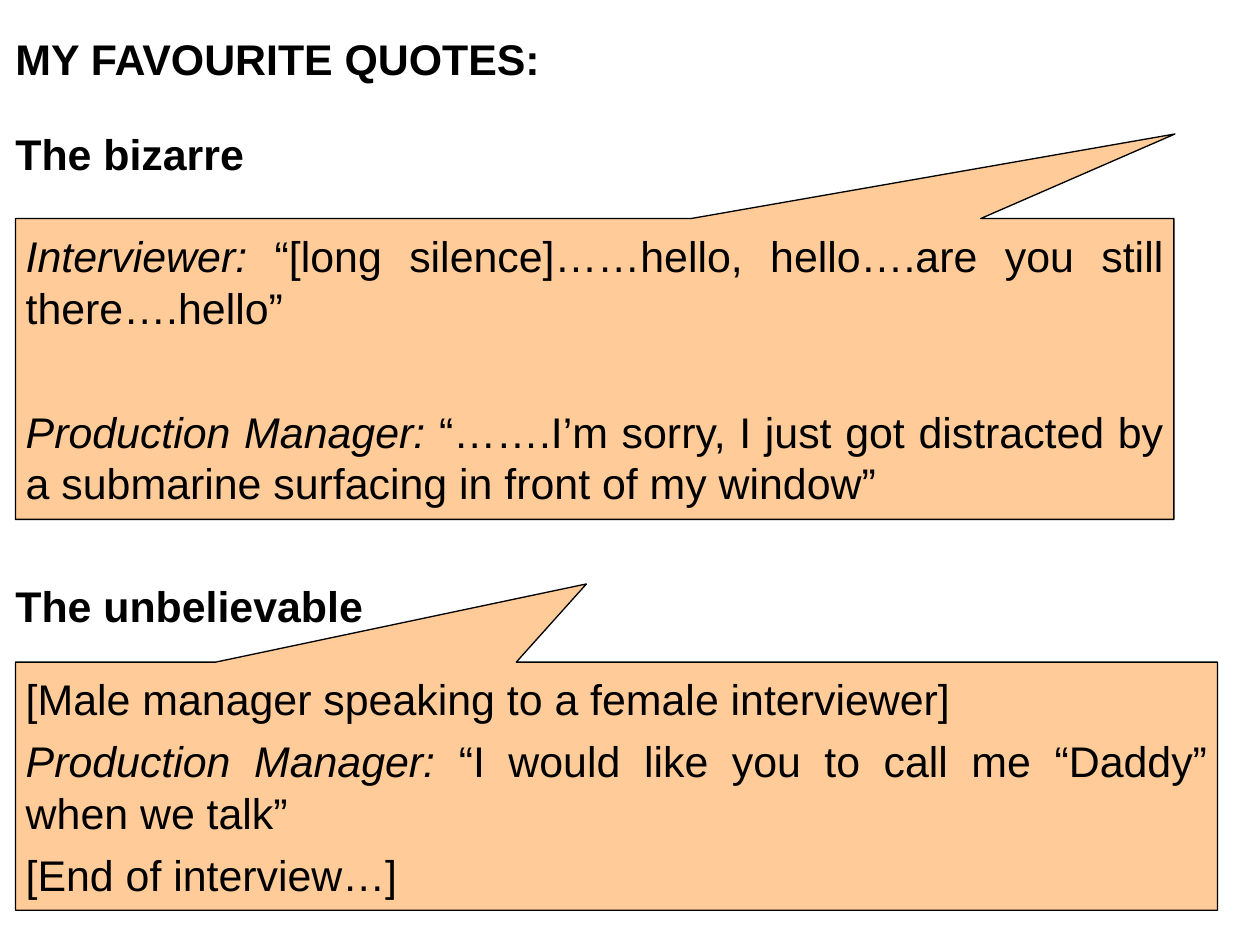
"""Build a slide of favourite interview quotes in two speech callouts."""
from dataclasses import dataclass

from pptx import Presentation
from pptx.dml.color import RGBColor
from pptx.enum.shapes import MSO_SHAPE
from pptx.enum.text import MSO_ANCHOR, MSO_AUTO_SIZE, PP_ALIGN
from pptx.util import Inches, Pt

BLACK = RGBColor(0x00, 0x00, 0x00)
PEACH = RGBColor(0xFF, 0xCC, 0x99)
LEFT = 0.12
HEADING_WIDTH, HEADING_HEIGHT = 9.6, 0.5
LINE_PITCH = 28.8
QUOTE_GAP = 6


@dataclass(frozen=True)
class Line:
    text: str
    speaker: str = ""
    gap: float = QUOTE_GAP


@dataclass(frozen=True)
class Quote:
    heading: str
    heading_top: float
    top: float
    width: float
    height: float
    tip: tuple[float, float]
    lines: tuple[Line, ...]


QUOTES = (
    Quote("The bizarre", 0.94, 1.7, 9.01, 2.34, (0.501, -0.781), (
        Line(" “[long silence]……hello, hello….are you still there….hello”", "Interviewer:"),
        Line(" “…….I’m sorry, I just got distracted by a submarine surfacing "
             "in front of my window”", "Production Manager:",
             gap=LINE_PITCH + 2 * QUOTE_GAP),
    )),
    Quote("The unbelievable", 4.46, 5.15, 9.35, 1.93, (-0.025, -0.815), (
        Line("[Male manager speaking to a female interviewer]"),
        Line(" “I would like you to call me “Daddy” when we talk”", "Production Manager:"),
        Line("[End of interview…]"),
    )),
)


def set_margins(tf, side_left: float, side_right: float, vertical: float) -> None:
    tf.word_wrap = True
    tf.auto_size = MSO_AUTO_SIZE.NONE
    tf.margin_left, tf.margin_right = Inches(side_left), Inches(side_right)
    tf.margin_top = tf.margin_bottom = Inches(vertical)


def format_paragraph(p, align: PP_ALIGN, bold: bool = False) -> None:
    p.alignment = align
    p.line_spacing = Pt(LINE_PITCH)
    p.font.name = "Arial"
    p.font.size = Pt(24)
    p.font.bold = bold
    p.font.color.rgb = BLACK


def format_heading(s, text: str, top: float) -> None:
    s.left, s.top = Inches(LEFT), Inches(top)
    s.width, s.height = Inches(HEADING_WIDTH), Inches(HEADING_HEIGHT)
    tf = s.text_frame
    set_margins(tf, 0, 0.1, 0.05)
    tf.vertical_anchor = MSO_ANCHOR.TOP
    tf.text = text
    p = tf.paragraphs[0]
    format_paragraph(p, PP_ALIGN.LEFT, bold=True)
    p.space_before = Pt(0)


def add_callout(slide, quote: Quote) -> None:
    s = slide.shapes.add_shape(
        MSO_SHAPE.RECTANGULAR_CALLOUT, Inches(LEFT), Inches(quote.top),
        Inches(quote.width), Inches(quote.height))
    s.shadow.inherit = False
    s.adjustments[0], s.adjustments[1] = quote.tip
    s.fill.solid()
    s.fill.fore_color.rgb = PEACH
    s.line.color.rgb = BLACK
    s.line.width = Pt(0.75)
    tf = s.text_frame
    set_margins(tf, 0.08, 0.08, 0.08)
    tf.vertical_anchor = MSO_ANCHOR.MIDDLE
    for i, line in enumerate(quote.lines):
        p = tf.add_paragraph() if i else tf.paragraphs[0]
        format_paragraph(p, PP_ALIGN.JUSTIFY)
        p.space_before = Pt(line.gap if i else 0)
        if line.speaker:
            r = p.add_run()
            r.text = line.speaker
            r.font.italic = True
        p.add_run().text = line.text


def main() -> None:
    prs = Presentation()
    prs.slide_width, prs.slide_height = Inches(9.8), Inches(7.35)
    slide = prs.slides.add_slide(prs.slide_layouts[5])
    format_heading(slide.shapes.title, "MY FAVOURITE QUOTES:", 0.2)
    for quote in QUOTES:
        box = slide.shapes.add_textbox(0, 0, 0, 0)
        format_heading(box, quote.heading, quote.heading_top)
        add_callout(slide, quote)
    prs.save("out.pptx")


if __name__ == "__main__":
    main()
